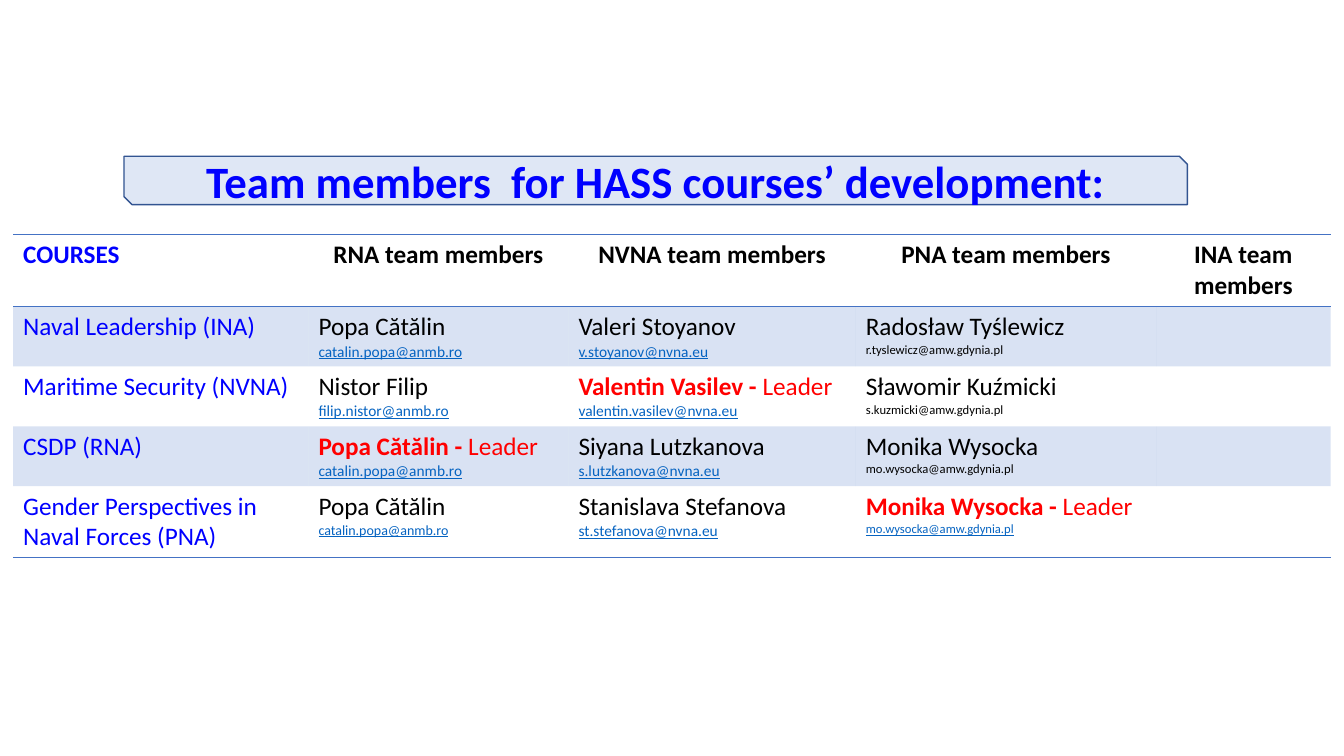
import pptx
import pptx.dml.color
import pptx.enum.shapes
import pptx.enum.text
import pptx.oxml
import pptx.oxml.ns
import pptx.util

Pt = pptx.util.Pt
RGBColor = pptx.dml.color.RGBColor
PP_ALIGN = pptx.enum.text.PP_ALIGN

BLUE = RGBColor(0x00, 0x00, 0xFF)
BLACK = RGBColor(0x00, 0x00, 0x00)
RED = RGBColor(0xFF, 0x00, 0x00)
MAIL_BLUE = RGBColor(0x05, 0x63, 0xC1)
ACCENT = RGBColor(0x44, 0x72, 0xC4)
BANNER_FILL = RGBColor(0xDF, 0xE7, 0xF5)
BANNER_LINE = RGBColor(0x32, 0x54, 0x91)

FONT = "Calibri"
PLAIN_TABLE_STYLE = "{2D5ABB26-0587-4C30-8999-92F81FD0307C}"
BANNER_BOX = (Pt(88.56), Pt(111.6), Pt(759.6), Pt(34.56))
TABLE_LEFT, TABLE_TOP = 9.36, 167.76
COLUMN_WIDTHS = (210.96, 185.76, 205.2, 214.56, 124.56)
ROW_HEIGHT = 37.44

HEADINGS = ("COURSES", "RNA team members", "NVNA team members",
            "PNA team members", "INA team members")
# Each member: name, e-mail, e-mail size, e-mail shown as a link
COURSES = (
    ("Naval Leadership (INA)", None, (
        ("Popa Cătălin", "catalin.popa@anmb.ro", 11, True),
        ("Valeri Stoyanov", "v.stoyanov@nvna.eu", 11, True),
        ("Radosław Tyślewicz", "r.tyslewicz@amw.gdynia.pl", 9, False))),
    ("Maritime Security (NVNA)", "Valentin Vasilev", (
        ("Nistor Filip", "filip.nistor@anmb.ro", 11, True),
        ("Valentin Vasilev", "valentin.vasilev@nvna.eu", 11, True),
        ("Sławomir Kuźmicki", "s.kuzmicki@amw.gdynia.pl", 9, False))),
    ("CSDP (RNA)", "Popa Cătălin", (
        ("Popa Cătălin", "catalin.popa@anmb.ro", 11, True),
        ("Siyana Lutzkanova", "s.lutzkanova@nvna.eu", 11, True),
        ("Monika Wysocka", "mo.wysocka@amw.gdynia.pl", 9, False))),
    ("Gender Perspectives in Naval Forces (PNA)", "Monika Wysocka", (
        ("Popa Cătălin", "catalin.popa@anmb.ro", 10, True),
        ("Stanislava Stefanova", "st.stefanova@nvna.eu", 11, True),
        ("Monika Wysocka", "mo.wysocka@amw.gdynia.pl", 9, True))),
)


def set_attributes(target, values):
    for name, value in values.items():
        setattr(target, name, value)


def add_run(paragraph, text, color, size=18, bold=False, underline=False):
    run = paragraph.add_run()
    run.text = text
    set_attributes(run.font, {"name": FONT, "size": Pt(size), "bold": bold,
                              "underline": underline})
    run.font.color.rgb = color


def add_banner(slide, text):
    """Place the title placeholder on a snipped rectangle."""
    banner = slide.shapes.add_shape(
        pptx.enum.shapes.MSO_SHAPE.SNIP_2_DIAG_RECTANGLE, *BANNER_BOX)
    banner.shadow.inherit = False
    banner.fill.solid()
    banner.fill.fore_color.rgb = BANNER_FILL
    banner.line.color.rgb = BANNER_LINE
    banner.line.width = Pt(1)

    title = slide.shapes.title
    set_attributes(title, dict(zip(("left", "top", "width", "height"), BANNER_BOX)))
    set_attributes(title.text_frame, {
        "word_wrap": True,
        "auto_size": pptx.enum.text.MSO_AUTO_SIZE.NONE,
        "vertical_anchor": pptx.enum.text.MSO_ANCHOR.MIDDLE})
    paragraph = title.text_frame.paragraphs[0]
    paragraph.alignment = PP_ALIGN.CENTER
    add_run(paragraph, text, BLUE, size=32, bold=True)
    banner._element.addnext(title._element)


def add_plain_table(slide, row_count):
    frame = slide.shapes.add_table(
        row_count, len(COLUMN_WIDTHS), Pt(TABLE_LEFT), Pt(TABLE_TOP),
        Pt(sum(COLUMN_WIDTHS)), Pt(ROW_HEIGHT * row_count))
    table = frame.table
    set_attributes(table, {"first_row": False, "horz_banding": False})
    style = table._tbl.tblPr.find(pptx.oxml.ns.qn("a:tableStyleId"))
    style.text = PLAIN_TABLE_STYLE
    for column, width in zip(table.columns, COLUMN_WIDTHS):
        column.width = Pt(width)
    for row in table.rows:
        row.height = Pt(ROW_HEIGHT)
    return table


def fill_cell(cell, banded):
    if not banded:
        cell.fill.background()
        return
    cell.fill.solid()
    cell.fill.fore_color.rgb = ACCENT
    color = cell._tc.tcPr.find(".//" + pptx.oxml.ns.qn("a:srgbClr"))
    color.append(pptx.oxml.parse_xml(
        f'<a:alpha {pptx.oxml.ns.nsdecls("a")} val="20000"/>'))


def add_borders(cell, sides):
    """Rule the given sides, in the order T, B, ahead of the cell fill."""
    for position, side in enumerate(sides):
        cell._tc.get_or_add_tcPr().insert(position, pptx.oxml.parse_xml(
            f'<a:ln{side} {pptx.oxml.ns.nsdecls("a")} w="{Pt(1)}"><a:solidFill>'
            f'<a:srgbClr val="{ACCENT}"/></a:solidFill></a:ln{side}>'))


def write_member(cell, leader, name, mail, mail_size, linked):
    paragraph = cell.text_frame.paragraphs[0]
    if name == leader:
        add_run(paragraph, name + " - ", RED, bold=True)
        add_run(paragraph, "Leader", RED)
    else:
        add_run(paragraph, name, BLACK)
    add_run(cell.text_frame.add_paragraph(), mail,
            MAIL_BLUE if linked else BLACK, size=mail_size, underline=linked)


def add_team_table(slide):
    table = add_plain_table(slide, len(COURSES) + 1)
    for column, heading in enumerate(HEADINGS):
        paragraph = table.cell(0, column).text_frame.paragraphs[0]
        paragraph.alignment = PP_ALIGN.CENTER if column else PP_ALIGN.LEFT
        add_run(paragraph, heading, BLACK if column else BLUE, bold=True)

    for row, (course, leader, members) in enumerate(COURSES, start=1):
        add_run(table.cell(row, 0).text_frame.paragraphs[0], course, BLUE)
        for column, member in enumerate(members, start=1):
            write_member(table.cell(row, column), leader, *member)

    borders = {0: "TB", len(COURSES): "B"}
    for row_index, row in enumerate(table.rows):
        for cell in row.cells:
            fill_cell(cell, banded=row_index % 2 == 1)
            add_borders(cell, borders.get(row_index, ""))


def main():
    presentation = pptx.Presentation()
    set_attributes(presentation, {"slide_width": Pt(960), "slide_height": Pt(540)})
    slide = presentation.slides.add_slide(presentation.slide_layouts[5])
    add_banner(slide, "Team members  for HASS courses’ development:")
    add_team_table(slide)
    presentation.save("out.pptx")


if __name__ == "__main__":
    main()
